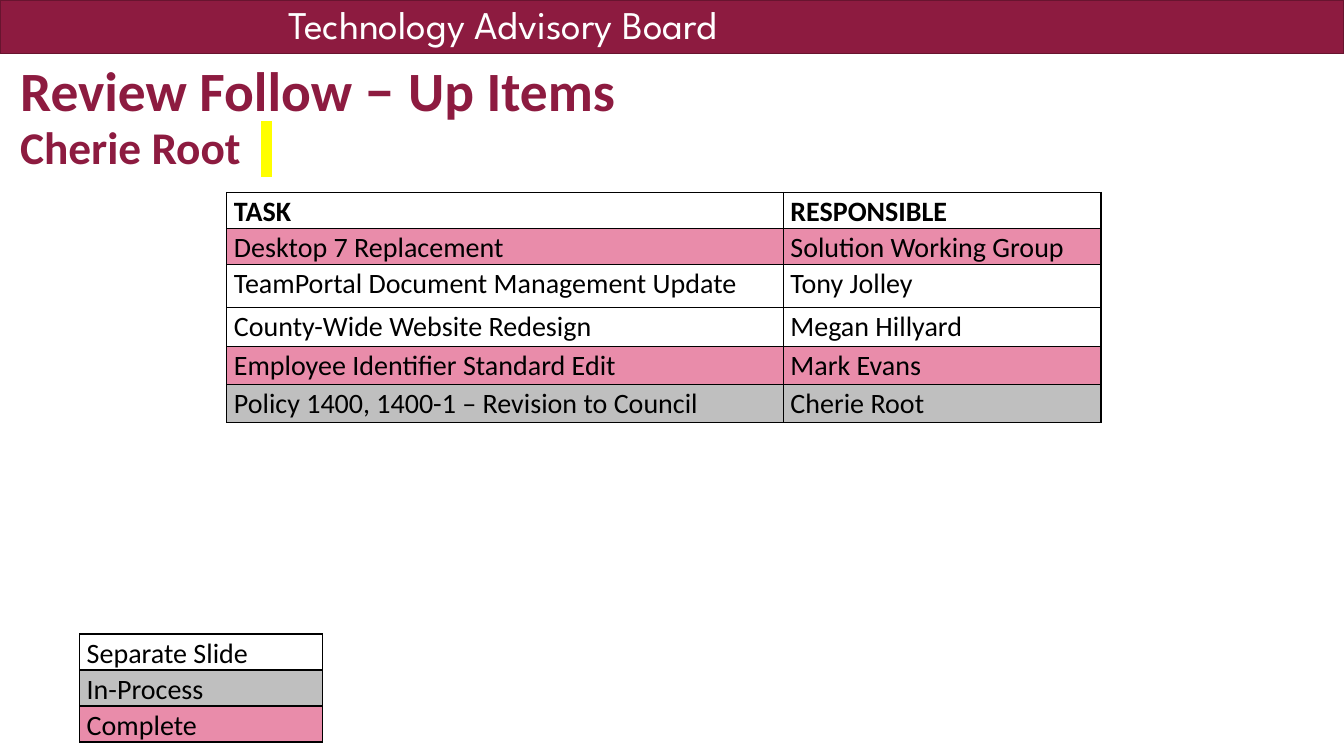
import pptx
import pptx.dml.color
import pptx.enum.shapes
import pptx.oxml
import pptx.oxml.ns
import pptx.util
from pptx.util import Inches

COLORS = {"maroon": "8D1B40", "maroon_edge": "68142F", "white": "FFFFFF",
          "black": "000000", "pink": "E98CAA", "gray": "BFBFBF", "yellow": "FFFF00"}
STATUS_FILL = {"separate": "white", "in_process": "gray", "complete": "pink"}

BOARD = "Technology Advisory Board"
TITLE = [("Review Follow ", 39.6), ("–", 44.1), (" Up Items", 39.6)]
PRESENTER = "Cherie Root"
TASK_HEADER = ("TASK", "RESPONSIBLE")
TASKS = [
    ("Desktop 7 Replacement", "Solution Working Group", "complete"),
    ("TeamPortal Document Management Update", "Tony Jolley", "separate"),
    ("County-Wide Website Redesign", "Megan Hillyard", "separate"),
    ("Employee Identifier Standard Edit", "Mark Evans", "complete"),
    ("Policy 1400, 1400-1 – Revision to Council", "Cherie Root", "in_process"),
]
LEGEND = [("Separate Slide", "separate"), ("In-Process", "in_process"),
          ("Complete", "complete")]


def rgb(name):
    return pptx.dml.color.RGBColor.from_string(COLORS[name])


def drawing_xml(tag, body):
    namespace = pptx.oxml.ns.nsdecls("a")
    return pptx.oxml.parse_xml(f"<a:{tag} {namespace}>{body}</a:{tag}>")


def write(paragraph, text, size, color="black", font="Calibri", bold=False,
          spacing=None, tracking=None, highlight=None):
    """Append a run; spacing is the line spacing, tracking is in points."""
    run = paragraph.add_run()
    run.text = text
    run.font.size = pptx.util.Pt(size)
    run.font.name = font
    run.font.bold = bold
    run.font.color.rgb = rgb(color)
    if spacing:
        paragraph.line_spacing = spacing
    properties = run.font._element
    if tracking:
        properties.set("spc", str(round(tracking * 100)))
    if highlight:
        mark = drawing_xml("highlight", f'<a:srgbClr val="{COLORS[highlight]}"/>')
        properties.find(pptx.oxml.ns.qn("a:solidFill")).addnext(mark)


def add_text_frame(slide, left, top, width, height, inset):
    box = slide.shapes.add_textbox(Inches(left), Inches(top),
                                   Inches(width), Inches(height))
    frame = box.text_frame
    frame.word_wrap = True
    frame.margin_left = frame.margin_right = Inches(inset)
    frame.margin_top = frame.margin_bottom = Inches(inset / 2)
    return frame


def outline_cell(cell):
    """Draw a 1 pt black line on all four sides, ahead of the cell's fill."""
    properties = cell._tc.get_or_add_tcPr()
    fill = f'<a:solidFill><a:srgbClr val="{COLORS["black"]}"/></a:solidFill>'
    for position, side in enumerate(("lnL", "lnR", "lnT", "lnB")):
        line = drawing_xml(side, fill)
        line.set("w", str(pptx.util.Pt(1)))
        properties.insert(position, line)


def add_grid(slide, left, top, widths, heights, rows):
    """Each row is (texts, fill colour, bold)."""
    frame = slide.shapes.add_table(len(rows), len(widths), Inches(left), Inches(top),
                                   Inches(sum(widths)), Inches(sum(heights)))
    table = frame.table
    for column, width in zip(table.columns, widths):
        column.width = Inches(width)
    for row, height, (texts, fill, bold) in zip(table.rows, heights, rows):
        row.height = Inches(height)
        for cell, text in zip(row.cells, texts):
            cell.margin_left = cell.margin_right = Inches(0.07)
            cell.margin_top = cell.margin_bottom = 0
            cell.fill.solid()
            cell.fill.fore_color.rgb = rgb(fill)
            outline_cell(cell)
            write(cell.text_frame.paragraphs[0], text, 20, bold=bold, spacing=1.07)


def add_banner(slide):
    banner = slide.shapes.add_shape(pptx.enum.shapes.MSO_SHAPE.RECTANGLE,
                                    0, 0, Inches(13.33), Inches(0.53))
    banner.shadow.inherit = False
    banner.fill.solid()
    banner.fill.fore_color.rgb = rgb("maroon")
    banner.line.color.rgb = rgb("maroon_edge")
    banner.line.width = pptx.util.Pt(1)
    board = add_text_frame(slide, 2.76, -0.05, 5.38, 0.57, inset=0.1)
    write(board.paragraphs[0], BOARD, 28, color="white", font="League Spartan")


def add_heading(slide):
    heading = add_text_frame(slide, 0.2, 0.58, 12, 0.75, inset=0).paragraphs[0]
    style = {"color": "maroon", "bold": True, "spacing": 0.9}
    for text, size in TITLE:
        write(heading, text, size, **style)
    heading.add_line_break()
    write(heading, PRESENTER, 32.4, **style)
    write(heading, " ", 32.4, tracking=7.3, **style)
    write(heading, " ", 32.4, highlight="yellow", **style)


def main():
    deck = pptx.Presentation()
    deck.slide_width, deck.slide_height = Inches(13.33), Inches(7.5)
    slide = deck.slides.add_slide(deck.slide_layouts[6])
    add_banner(slide)
    add_heading(slide)
    task_rows = [(TASK_HEADER, "white", True)]
    task_rows += [((task, owner), STATUS_FILL[status], False)
                  for task, owner, status in TASKS]
    add_grid(slide, 2.25, 1.91, [5.52, 3.15], [0.34] * 2 + [0.43] + [0.38] * 3, task_rows)
    legend_rows = [((label,), STATUS_FILL[status], False) for label, status in LEGEND]
    add_grid(slide, 0.79, 6.29, [2.41], [0.34] * len(LEGEND), legend_rows)
    deck.save("out.pptx")


if __name__ == "__main__":
    main()
